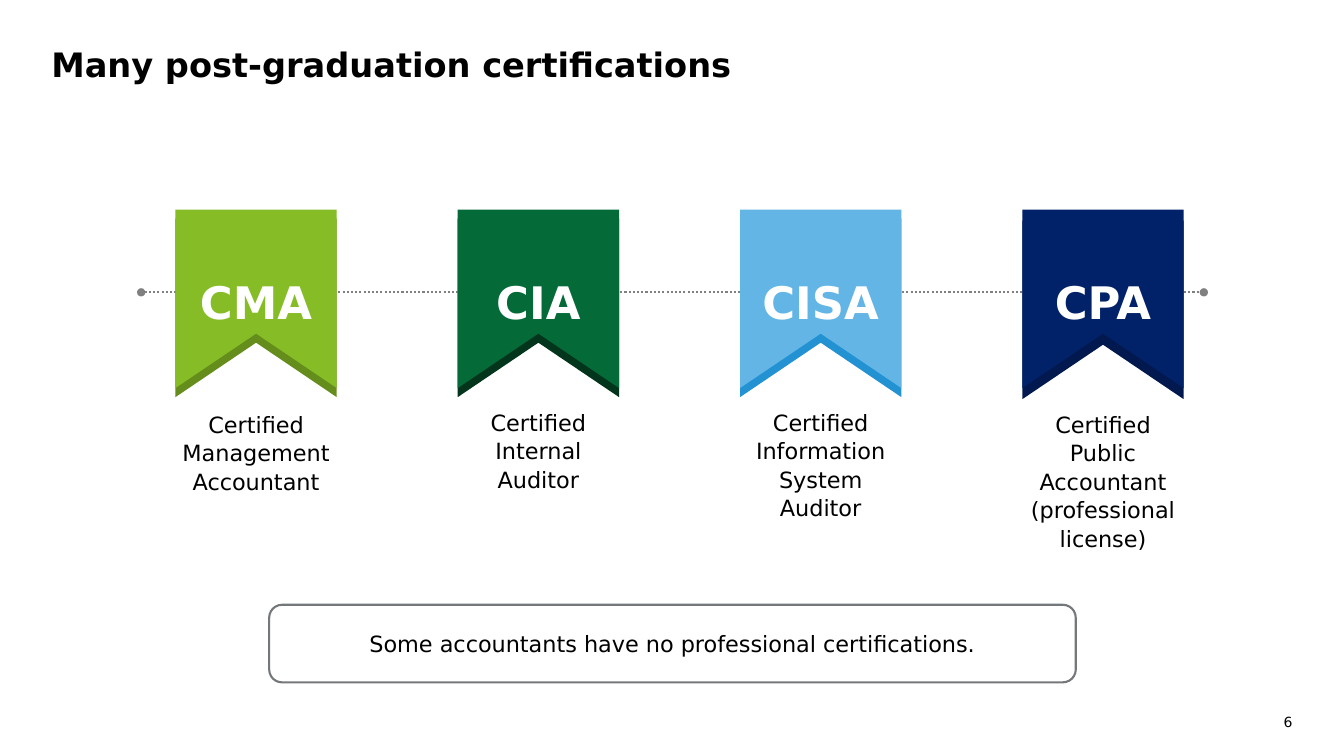
from lxml import etree
from pptx import Presentation
from pptx import util as u
from pptx.dml.color import RGBColor
from pptx.enum import dml, shapes, text
from pptx.oxml.ns import qn

IN = u.Inches
ALIGN = text.PP_ALIGN
MID = text.MSO_ANCHOR.MIDDLE
TOP = text.MSO_ANCHOR.TOP


def color(code):
    return RGBColor.from_string(code)


class Deck:
    """Current slide and the style shared by its elements."""

    face = "DejaVu Sans"

    def __init__(self, slide):
        self.slide = slide
        self.items = slide.shapes

    def letter(self, shape, words, size=16, tone="000000", bold=False,
               align=ALIGN.CENTER, anchor=TOP, pads=(0, 0, 0, 0), space=None):
        """Fill a shape with one paragraph; pads are left, top, right, bottom."""
        frame = shape.text_frame
        frame.text = words
        sides = ("margin_left", "margin_top", "margin_right", "margin_bottom")
        form = dict(zip(sides, map(IN, pads)))
        form.update(word_wrap=True, vertical_anchor=anchor,
                    auto_size=text.MSO_AUTO_SIZE.NONE)
        para = frame.paragraphs[0]
        font = para.runs[0].font
        looks = (
            (frame, form),
            (para, {"alignment": align, "line_spacing": space}),
            (font, {"name": self.face, "size": u.Pt(size), "bold": bold}),
        )
        for part, values in looks:
            for key, value in values.items():
                setattr(part, key, value)
        font.color.rgb = color(tone)

    def paint(self, shape, fill, edge=None):
        shape.shadow.inherit = False
        shape.fill.solid()
        shape.fill.fore_color.rgb = color(fill)
        if edge:
            shape.line.color.rgb = color(edge)
            shape.line.width = u.Pt(1.5)
        else:
            shape.line.fill.background()

    def title(self, words, *place):
        head = self.items.title
        head.left, head.top, head.width, head.height = map(IN, place)
        self.letter(head, words, size=24, bold=True, align=ALIGN.LEFT)

    def label(self, words, *place, **style):
        box = self.items.add_textbox(*map(IN, place))
        self.letter(box, words, **style)

    def box(self, words, *place, kind=shapes.MSO_SHAPE.RECTANGLE, edge=None, **style):
        box = self.items.add_shape(kind, *map(IN, place))
        self.paint(box, "FFFFFF", edge)
        self.letter(box, words, **style)

    def ribbon(self, left, top, fill, words=None):
        """Draw a banner with a notch cut into its lower edge."""
        wide, tall, notch = 1.6, 1.77, 1.23
        points = [(0, 0), (wide, 0), (wide, tall), (wide / 2, notch), (0, tall)]
        spots = [(IN(left + x), IN(top + y)) for x, y in points]
        pen = self.items.build_freeform(*spots[0], scale=1.0)
        pen.add_line_segments(spots[1:], close=True)
        shape = pen.convert_to_shape()
        self.paint(shape, fill)
        if words:
            self.letter(shape, words, size=32, tone="FFFFFF", bold=True,
                        anchor=MID, pads=(0, 0.05, 0, 0))

    def rail(self, start, end, y):
        """Draw a dotted line with a dot at each end."""
        rail = self.items.add_connector(
            shapes.MSO_CONNECTOR.STRAIGHT, IN(start), IN(y), IN(end), IN(y))
        rail.line.color.rgb = color("808080")
        rail.line.width = u.Pt(1.5)
        rail.line.dash_style = dml.MSO_LINE.ROUND_DOT
        line = rail._element.spPr.find(qn("a:ln"))
        for tag in ("a:headEnd", "a:tailEnd"):
            etree.SubElement(line, qn(tag), type="oval")
        etree.SubElement(rail._element.spPr, qn("a:effectLst"))


def main():
    show = Presentation()
    show.slide_width, show.slide_height = IN(13.33), IN(7.5)
    deck = Deck(show.slides.add_slide(show.slide_layouts[5]))
    # short name, full name, fill, fold color, fold drop, caption top
    certs = [
        ("CMA", "Certified Management Accountant", "86BC25", "658D1C", 0.09, 3.96),
        ("CIA", "Certified Internal Auditor", "046A38", "02351C", 0.09, 3.94),
        ("CISA", "Certified Information System Auditor", "62B5E5", "2392D2", 0.09, 3.94),
        ("CPA", "Certified Public Accountant (professional license)",
         "012169", "01194F", 0.11, 3.96),
    ]
    left, top, step = 1.74, 2.08, 2.8
    cols = [(left + i * step, cert) for i, cert in enumerate(certs)]

    deck.title("Many post-graduation certifications", 0.51, 0.44, 12.31, 0.76)
    for x, (_, _, _, fold, drop, _) in cols:
        deck.ribbon(x, top + drop, fold)
    deck.rail(1.4, 11.94, 2.9)
    for x, (short, _, fill, *_) in cols:
        deck.ribbon(x, top, fill, short)
    for x, (_, full, _, _, _, y) in cols:
        deck.box(full, x, y, 1.6, 1.55, pads=(0, 0.1, 0, 0.1), space=1.06)
    deck.box("Some accountants have no professional certifications.",
             2.67, 6, 8, 0.77, kind=shapes.MSO_SHAPE.ROUNDED_RECTANGLE,
             edge="75787B", anchor=MID, pads=(0.1, 0.1, 0.1, 0.1))
    deck.label("6", 12.48, 7.08, 0.34, 0.17, size=10, align=ALIGN.RIGHT)
    show.save("out.pptx")


if __name__ == "__main__":
    main()
